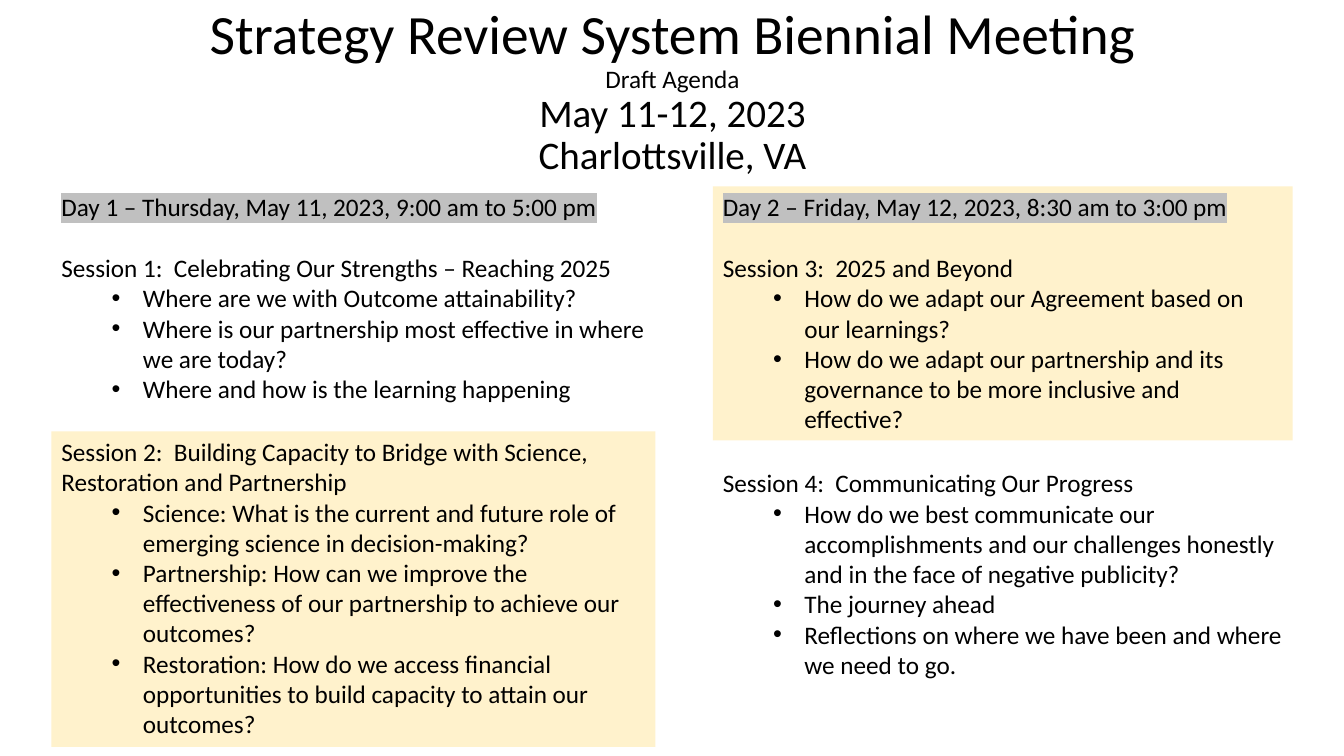
from lxml.etree import SubElement
from pptx import Presentation
from pptx.dml.color import RGBColor
from pptx.enum.text import MSO_ANCHOR, MSO_AUTO_SIZE, PP_ALIGN
from pptx.oxml.ns import qn
from pptx.util import Inches, Pt


def colour(hex_value):
    return RGBColor.from_string(hex_value)


class AgendaSlide:
    FONT = "Calibri"
    TEXT = "000000"
    BAND = "FFF2CC"
    HIGHLIGHT = "C0C0C0"
    BODY_SIZE = 18
    BODY_LINE = 22

    def __init__(self, presentation):
        self.slide = presentation.slides.add_slide(presentation.slide_layouts[5])

    def set_font(self, paragraph, size):
        paragraph.font.name = self.FONT
        paragraph.font.size = Pt(size)
        paragraph.font.color.rgb = colour(self.TEXT)

    def add_paragraph(self, frame, text, size):
        first = frame.paragraphs[0]
        paragraph = frame.add_paragraph() if first.runs else first
        paragraph.add_run().text = text
        self.set_font(paragraph, size)
        return paragraph

    def title(self, lines, left, top, width, height):
        heading = self.slide.shapes.title
        heading.left, heading.top = Inches(left), Inches(top)
        heading.width, heading.height = Inches(width), Inches(height)
        frame = heading.text_frame
        frame.word_wrap = True
        frame.auto_size = MSO_AUTO_SIZE.NONE
        frame.vertical_anchor = MSO_ANCHOR.MIDDLE
        for text, size in lines:
            paragraph = self.add_paragraph(frame, text, size)
            paragraph.alignment = PP_ALIGN.CENTER
            paragraph.line_spacing = 0.9

    def day(self, frame, text):
        paragraph = self.add_paragraph(frame, text, self.BODY_SIZE)
        paragraph.space_after = Pt(self.BODY_LINE)
        properties = paragraph.runs[0].font._element
        highlight = SubElement(properties, qn("a:highlight"))
        SubElement(highlight, qn("a:srgbClr"), val=self.HIGHLIGHT)

    def bullet(self, frame, text):
        paragraph = frame.add_paragraph()
        paragraph.add_run().text = text
        paragraph.level = 1
        properties = paragraph._p.get_or_add_pPr()
        properties.set("marL", str(Inches(0.81)))
        properties.set("indent", str(Inches(-0.31)))
        SubElement(properties, qn("a:buFont"), typeface="Arial")
        SubElement(properties, qn("a:buChar"), char="•")
        self.set_font(paragraph, self.BODY_SIZE)

    def session(self, left, top, width, height, heading, topics, day=None, banded=False):
        box = self.slide.shapes.add_textbox(
            Inches(left), Inches(top), Inches(width), Inches(height))
        if banded:
            box.fill.solid()
            box.fill.fore_color.rgb = colour(self.BAND)
        frame = box.text_frame
        frame.word_wrap = True
        frame.auto_size = MSO_AUTO_SIZE.SHAPE_TO_FIT_TEXT
        if day:
            self.day(frame, day)
        self.add_paragraph(frame, heading, self.BODY_SIZE)
        for topic in topics:
            self.bullet(frame, topic)


def main():
    presentation = Presentation()
    presentation.slide_width = Inches(13.33)
    presentation.slide_height = Inches(7.5)
    agenda = AgendaSlide(presentation)

    agenda.title([
        ("Strategy Review System Biennial Meeting", 39.6),
        ("Draft Agenda", 18),
        ("May 11-12, 2023", 27.9),
        ("Charlottsville, VA", 27.9),
    ], 0.92, 0.19, 11.5, 1.45)

    day_1 = {"left": 0.51, "width": 5.99}
    day_2 = {"left": 7.07, "width": 5.75}
    agenda.session(
        **day_1, top=1.85, height=2.22,
        day="Day 1 – Thursday, May 11, 2023, 9:00 am to 5:00 pm",
        heading="Session 1:  Celebrating Our Strengths – Reaching 2025",
        topics=[
            "Where are we with Outcome attainability?",
            "Where is our partnership most effective in where we are today?",
            "Where and how is the learning happening",
        ])
    agenda.session(
        **day_1, top=4.28, height=3.13, banded=True,
        heading="Session 2:  Building Capacity to Bridge with Science, "
                "Restoration and Partnership",
        topics=[
            "Science: What is the current and future role of emerging science "
            "in decision-making?",
            "Partnership: How can we improve the effectiveness of our partnership "
            "to achieve our outcomes?",
            "Restoration: How do we access financial opportunities to build "
            "capacity to attain our outcomes?",
        ])
    agenda.session(
        **day_2, top=1.85, height=2.52, banded=True,
        day="Day 2 – Friday, May 12, 2023, 8:30 am to 3:00 pm",
        heading="Session 3:  2025 and Beyond",
        topics=[
            "How do we adapt our Agreement based on our learnings?",
            "How do we adapt our partnership and its governance to be more "
            "inclusive and effective?",
        ])
    agenda.session(
        **day_2, top=4.59, height=2.22,
        heading="Session 4:  Communicating Our Progress",
        topics=[
            "How do we best communicate our accomplishments and our challenges "
            "honestly and in the face of negative publicity?",
            "The journey ahead",
            "Reflections on where we have been and where we need to go.",
        ])
    presentation.save("out.pptx")


if __name__ == "__main__":
    main()
